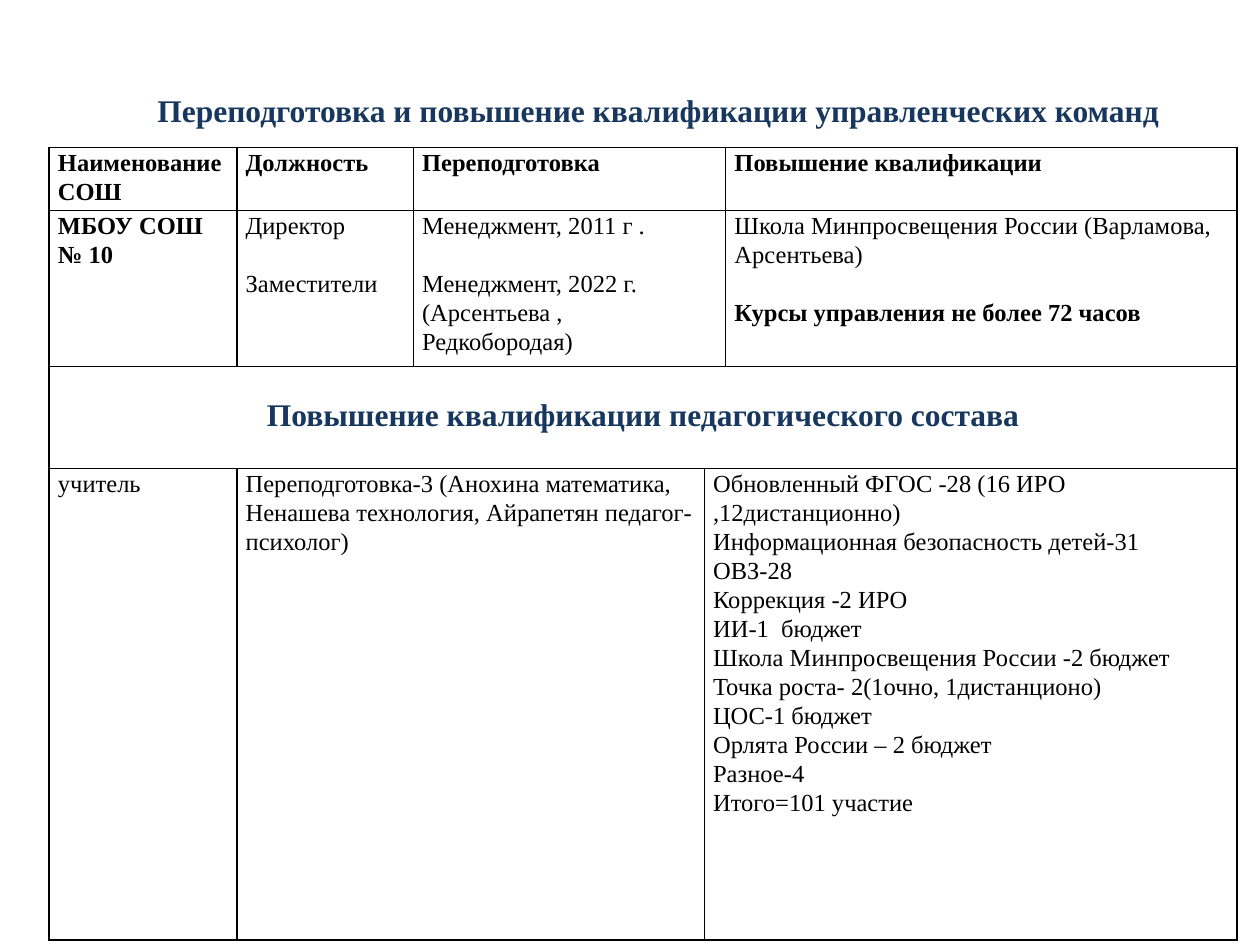
from lxml import etree
from pptx import Presentation
from pptx import util as u
from pptx.dml.color import RGBColor
from pptx.enum import text
from pptx.oxml import ns

NAVY = RGBColor(0x17, 0x37, 0x5E)
BLACK = RGBColor(0, 0, 0)
FONT = "Times New Roman"
GAP = u.Pt(16.6)
COLS = [1.49, 1.4, 2.31, 0.17, 4.06]
ROWS = [0.49, 1.24, 0.81, 3.74]

HEADS = ["Наименование СОШ", "Должность", "Переподготовка", "Повышение квалификации"]
POSTS = ["Директор", "Заместители"]
TRAINING = ["Менеджмент, 2011 г .", "Менеджмент, 2022 г.", "(Арсентьева , Редкобородая)"]
SCHOOL = ["Школа Минпросвещения России (Варламова, Арсентьева)"]
LIMIT = "Курсы управления не более 72 часов"
STAFF = ["Переподготовка-3 (Анохина математика, Ненашева технология, Айрапетян педагог-психолог)"]
COURSES = [
    "Обновленный ФГОС -28 (16 ИРО ,12дистанционно)",
    "Информационная безопасность детей-31",
    "ОВЗ-28",
    "Коррекция -2 ИРО",
    "ИИ-1  бюджет",
    "Школа Минпросвещения России -2 бюджет",
    "Точка роста- 2(1очно, 1дистанционо)",
    "ЦОС-1 бюджет",
    "Орлята России – 2 бюджет",
    "Разное-4",
    "Итого=101 участие",
]


class Page:
    def __init__(self, deck):
        self.slide = deck.slides.add_slide(deck.slide_layouts[6])

    def label(self, frame, lines, size=14, color=BLACK, bold=False, space=1.07):
        frame.word_wrap = True
        frame.text = "\n".join(lines)
        for para in frame.paragraphs:
            para.line_spacing = space
            for run in para.runs:
                font = run.font
                font.name, font.size, font.bold = FONT, u.Pt(size), bold
                font.color.rgb = color

    def title(self, line):
        box = self.slide.shapes.add_textbox(
            u.Inches(0.25), u.Inches(0.67), u.Inches(9.36), u.Inches(0.4))
        box.text_frame.margin_left = u.Inches(1)
        self.label(box.text_frame, [line], 18, NAVY, True, 1)

    def table(self):
        grid = self.slide.shapes.add_table(
            len(ROWS), len(COLS), u.Inches(0.39), u.Inches(1.17),
            u.Inches(sum(COLS)), u.Inches(sum(ROWS))).table
        grid.first_row = grid.horz_banding = False
        for col, width in zip(grid.columns, COLS):
            col.width = u.Inches(width)
        for row, height in zip(grid.rows, ROWS):
            row.height = u.Inches(height)
        for cell in grid.iter_cells():
            self.frame(cell)
        return grid

    def frame(self, cell):
        cell.margin_left = cell.margin_right = u.Inches(0.07)
        cell.margin_top = cell.margin_bottom = 0
        props = cell._tc.get_or_add_tcPr()
        for side in ("a:lnL", "a:lnR", "a:lnT", "a:lnB"):
            line = etree.SubElement(props, ns.qn(side), w=str(u.Pt(1)))
            fill = etree.SubElement(line, ns.qn("a:solidFill"))
            etree.SubElement(fill, ns.qn("a:srgbClr"), val=str(BLACK))
        cell.fill.background()

    def cell(self, grid, row, col, lines, last=None, gap=None, **style):
        cell = grid.cell(row, col)
        if last is not None:
            cell.merge(grid.cell(row, last))
        self.label(cell.text_frame, lines, **style)
        if gap is not None:
            cell.text_frame.paragraphs[gap].space_before = GAP
        return cell


def main():
    deck = Presentation()
    deck.slide_width, deck.slide_height = u.Inches(10), u.Inches(7.5)
    page = Page(deck)
    page.title("Переподготовка и повышение квалификации управленческих команд")
    grid = page.table()

    for col, last, head in zip((0, 1, 2, 4), (None, None, 3, None), HEADS):
        page.cell(grid, 0, col, [head], last, bold=True)

    page.cell(grid, 1, 0, ["МБОУ СОШ № 10"], bold=True)
    page.cell(grid, 1, 1, POSTS, gap=1)
    page.cell(grid, 1, 2, TRAINING, 3, gap=1)
    school = page.cell(grid, 1, 4, SCHOOL + [LIMIT], gap=1)
    school.text_frame.paragraphs[1].runs[0].font.bold = True

    band = page.cell(grid, 2, 0, ["Повышение квалификации педагогического состава"],
                     4, size=18, color=NAVY, bold=True)
    band.margin_top = u.Inches(0.23)
    band.text_frame.paragraphs[0].alignment = text.PP_ALIGN.CENTER

    page.cell(grid, 3, 0, ["учитель"])
    page.cell(grid, 3, 1, STAFF, 2)
    page.cell(grid, 3, 3, COURSES, 4)
    deck.save("out.pptx")


if __name__ == "__main__":
    main()
